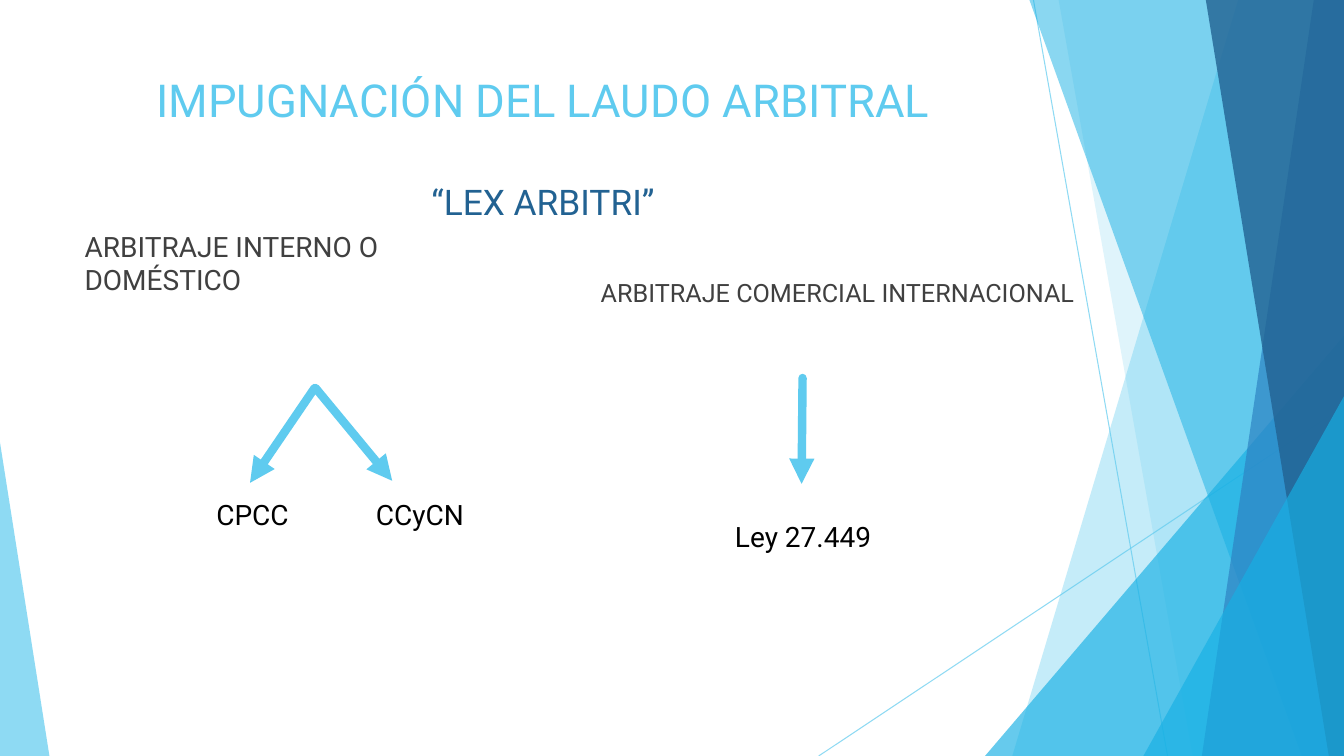
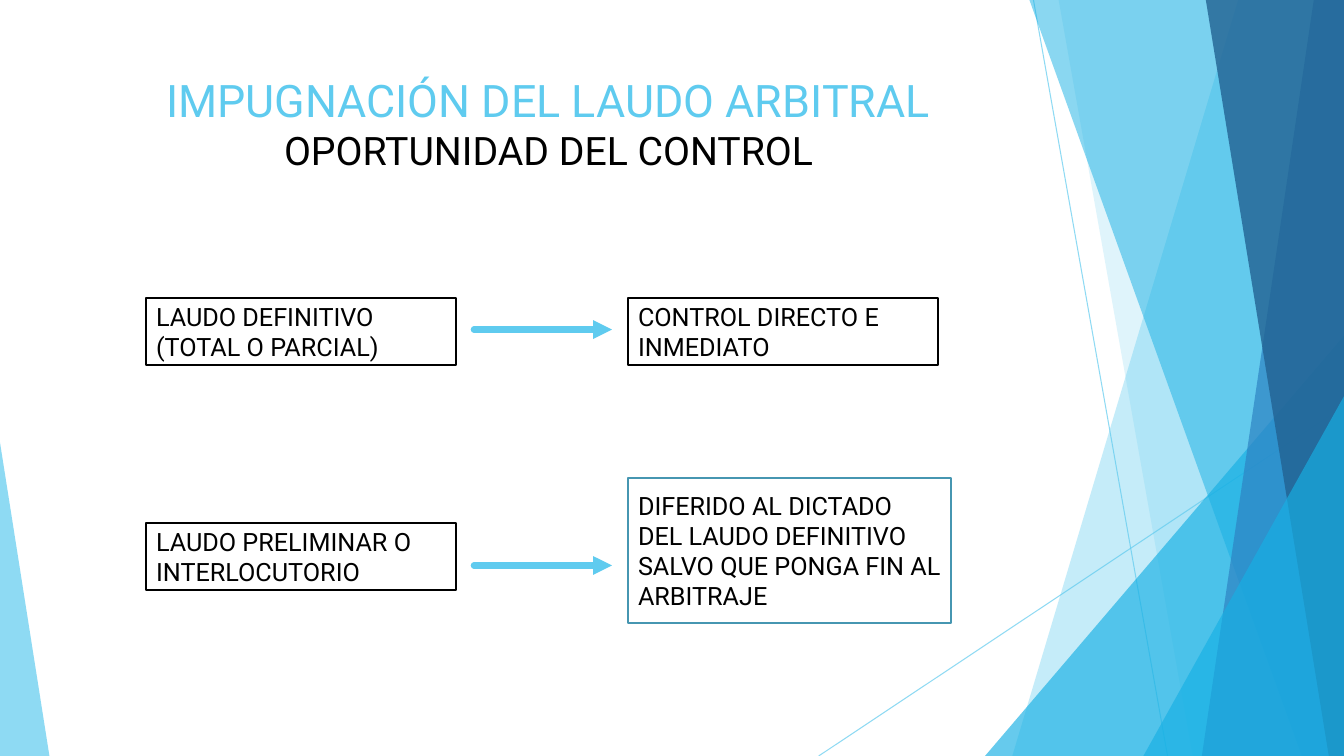
from dataclasses import dataclass

from lxml import etree
from pptx import Presentation
from pptx import util as u
from pptx.dml.color import RGBColor
from pptx.enum import shapes, text
from pptx.oxml import ns

PX = 9144  # EMU per px, at 100 px to the inch
WIDTH, HEIGHT = 1333, 750
FONT = "Roboto"

SKY = RGBColor(0x5F, 0xCB, 0xEF)
CYAN = RGBColor(0x17, 0xB0, 0xE4)
BLUE = RGBColor(0x2E, 0x83, 0xC3)
NAVY = RGBColor(0x22, 0x62, 0x92)
TEAL = RGBColor(0x46, 0x96, 0xB1)
GRAY = RGBColor(0x40, 0x40, 0x40)
BLACK = RGBColor(0, 0, 0)
WHITE = RGBColor(0xFF, 0xFF, 0xFF)

LEFT, CENTER = text.PP_ALIGN.LEFT, text.PP_ALIGN.CENTER
TOP, MIDDLE, BOTTOM = (text.MSO_ANCHOR.TOP, text.MSO_ANCHOR.MIDDLE,
                       text.MSO_ANCHOR.BOTTOM)


@dataclass(frozen=True)
class Box:
    left: int
    top: int
    width: int
    height: int

    def emu(self) -> tuple[int, ...]:
        return tuple(v * PX for v in (self.left, self.top, self.width, self.height))


@dataclass(frozen=True)
class Band:
    """Full-height band reaching the right edge, with a slanted left side."""
    top_x: int
    bottom_x: int
    color: RGBColor
    opacity: int


@dataclass(frozen=True)
class Wedge:
    """Triangle standing on the bottom edge; apex is 0 (left) or 1 (right)."""
    left: int
    top: int
    width: int
    apex: int
    color: RGBColor
    opacity: int


@dataclass(frozen=True)
class Line:
    x1: int
    y1: int
    x2: int
    y2: int


@dataclass(frozen=True)
class Words:
    content: str
    size: float
    color: RGBColor = BLACK
    space_before: float = 0


@dataclass(frozen=True)
class Label:
    box: Box
    words: Words
    align: text.PP_ALIGN = CENTER
    anchor: text.MSO_ANCHOR = TOP


@dataclass(frozen=True)
class Stage:
    box: Box
    content: str
    border: RGBColor = BLACK


HAIRLINES = (Line(1025, 0, 1158, HEIGHT), Line(WIDTH, 403, 812, HEIGHT))
FACETS = (
    Band(1228, 1004, SKY, 36),
    Band(1050, 1183, SKY, 20),
    Wedge(977, 333, 356, 1, CYAN, 66),
    Band(1021, 1291, CYAN, 50),
    Band(1303, 1192, BLUE, 70),
    Band(1196, 1318, NAVY, 80),
    Wedge(1134, 393, 199, 1, CYAN, 66),
    Wedge(0, 439, 49, 0, SKY, 70),
)

HEADING = "IMPUGNACIÓN DEL LAUDO ARBITRAL"

LAW_LABELS = (
    Label(Box(74, 236, 458, 63),
          Words("ARBITRAJE INTERNO O DOMÉSTICO", 20, GRAY), LEFT, BOTTOM),
    Label(Box(586, 236, 500, 74),
          Words("ARBITRAJE COMERCIAL INTERNACIONAL", 18, GRAY), LEFT, BOTTOM),
    Label(Box(672, 510, 249, 44), Words("Ley 27.449", 20)),
    Label(Box(159, 489, 183, 44), Words("CPCC", 20)),
    Label(Box(362, 489, 109, 44), Words("CCyCN", 20)),
)
LAW_ARROWS = (Line(312, 385, 248, 479), Line(313, 385, 389, 477),
              Line(796, 375, 795, 480))

AWARD_X, CONTROL_X = 145, 623
STAGE_W, STAGE_H = 307, 66
STAGES = (
    Stage(Box(AWARD_X, 296, STAGE_W, STAGE_H), "LAUDO DEFINITIVO (TOTAL O PARCIAL)"),
    Stage(Box(CONTROL_X, 296, STAGE_W, STAGE_H), "CONTROL DIRECTO E INMEDIATO"),
    Stage(Box(AWARD_X, 519, STAGE_W, STAGE_H), "LAUDO PRELIMINAR O INTERLOCUTORIO"),
    Stage(Box(CONTROL_X, 474, 320, 144),
          "DIFERIDO AL DICTADO DEL LAUDO DEFINITIVO "
          "SALVO QUE PONGA FIN AL ARBITRAJE", TEAL),
)
STAGE_ARROWS = tuple(Line(470, y, 607, y) for y in (327, 561))


def set_opacity(shape, percent: int) -> None:
    for color in shape._element.spPr.iter(ns.qn("a:srgbClr")):
        etree.SubElement(color, ns.qn("a:alpha"), val=str(percent * 1000))


def write(shape, paragraphs: tuple[Words, ...], align: text.PP_ALIGN,
          anchor: text.MSO_ANCHOR) -> None:
    frame = shape.text_frame
    frame.word_wrap = True
    frame.vertical_anchor = anchor
    for index, words in enumerate(paragraphs):
        paragraph = frame.add_paragraph() if index else frame.paragraphs[0]
        paragraph.alignment = align
        paragraph.space_before = u.Pt(words.space_before)
        run = paragraph.add_run()
        run.text = words.content
        run.font.name = FONT
        run.font.size = u.Pt(words.size)
        run.font.color.rgb = words.color


def add_line(slide, line: Line, weight: float):
    connector = slide.shapes.add_connector(
        shapes.MSO_CONNECTOR.STRAIGHT,
        *(v * PX for v in (line.x1, line.y1, line.x2, line.y2)))
    connector.line.color.rgb = SKY
    connector.line.width = u.Pt(weight)
    etree.SubElement(connector._element.spPr, ns.qn("a:effectLst"))
    return connector


def add_arrow(slide, line: Line, weight: float) -> None:
    outline = add_line(slide, line, weight).line._get_or_add_ln()
    outline.set("cap", "rnd")
    etree.SubElement(outline, ns.qn("a:round"))
    etree.SubElement(outline, ns.qn("a:tailEnd"), type="triangle")


def add_facet(slide, facet: Band | Wedge) -> None:
    if isinstance(facet, Band):
        builder = slide.shapes.build_freeform(facet.top_x, 0, scale=PX)
        builder.add_line_segments(
            [(WIDTH, 0), (WIDTH, HEIGHT), (facet.bottom_x, HEIGHT)])
        shape = builder.convert_to_shape()
    else:
        box = Box(facet.left, facet.top, facet.width, HEIGHT - facet.top)
        shape = slide.shapes.add_shape(
            shapes.MSO_SHAPE.ISOSCELES_TRIANGLE, *box.emu())
        shape.adjustments[0] = facet.apex
    shape.shadow.inherit = False
    shape.fill.solid()
    shape.fill.fore_color.rgb = facet.color
    shape.line.fill.background()
    set_opacity(shape, facet.opacity)


def add_label(slide, label: Label) -> None:
    shape = slide.shapes.add_textbox(*label.box.emu())
    write(shape, (label.words,), label.align, label.anchor)


def add_stage(slide, stage: Stage) -> None:
    shape = slide.shapes.add_shape(shapes.MSO_SHAPE.RECTANGLE, *stage.box.emu())
    shape.shadow.inherit = False
    shape.fill.solid()
    shape.fill.fore_color.rgb = WHITE
    shape.line.color.rgb = stage.border
    shape.line.width = u.Pt(1.5)
    write(shape, (Words(stage.content, 18),), LEFT, MIDDLE)


def add_themed_slide(deck, title_box: Box, heading_size: float, subtitle: Words):
    """Add a slide with the faceted backdrop and the two-part title."""
    slide = deck.slides.add_slide(deck.slide_layouts[6])
    for hairline in HAIRLINES:
        set_opacity(add_line(slide, hairline, 0.75), 70)
    for facet in FACETS:
        add_facet(slide, facet)
    title = slide.shapes.add_textbox(*title_box.emu())
    write(title, (Words(HEADING, heading_size, SKY), subtitle), CENTER, TOP)
    return slide


def build_law_slide(deck) -> None:
    slide = add_themed_slide(deck, Box(74, 67, 929, 170), 32.4,
                             Words("“LEX ARBITRI”", 25.2, NAVY, space_before=38))
    for label in LAW_LABELS:
        add_label(slide, label)
    for arrow in LAW_ARROWS:
        add_arrow(slide, arrow, 6)


def build_timing_slide(deck) -> None:
    slide = add_themed_slide(deck, Box(74, 67, 940, 144), 32,
                             Words("OPORTUNIDAD DEL CONTROL", 28))
    for stage in STAGES:
        add_stage(slide, stage)
    for arrow in STAGE_ARROWS:
        add_arrow(slide, arrow, 4.5)


def main() -> None:
    deck = Presentation()
    deck.slide_width, deck.slide_height = WIDTH * PX, HEIGHT * PX
    build_law_slide(deck)
    build_timing_slide(deck)
    deck.save("out.pptx")


if __name__ == "__main__":
    main()
